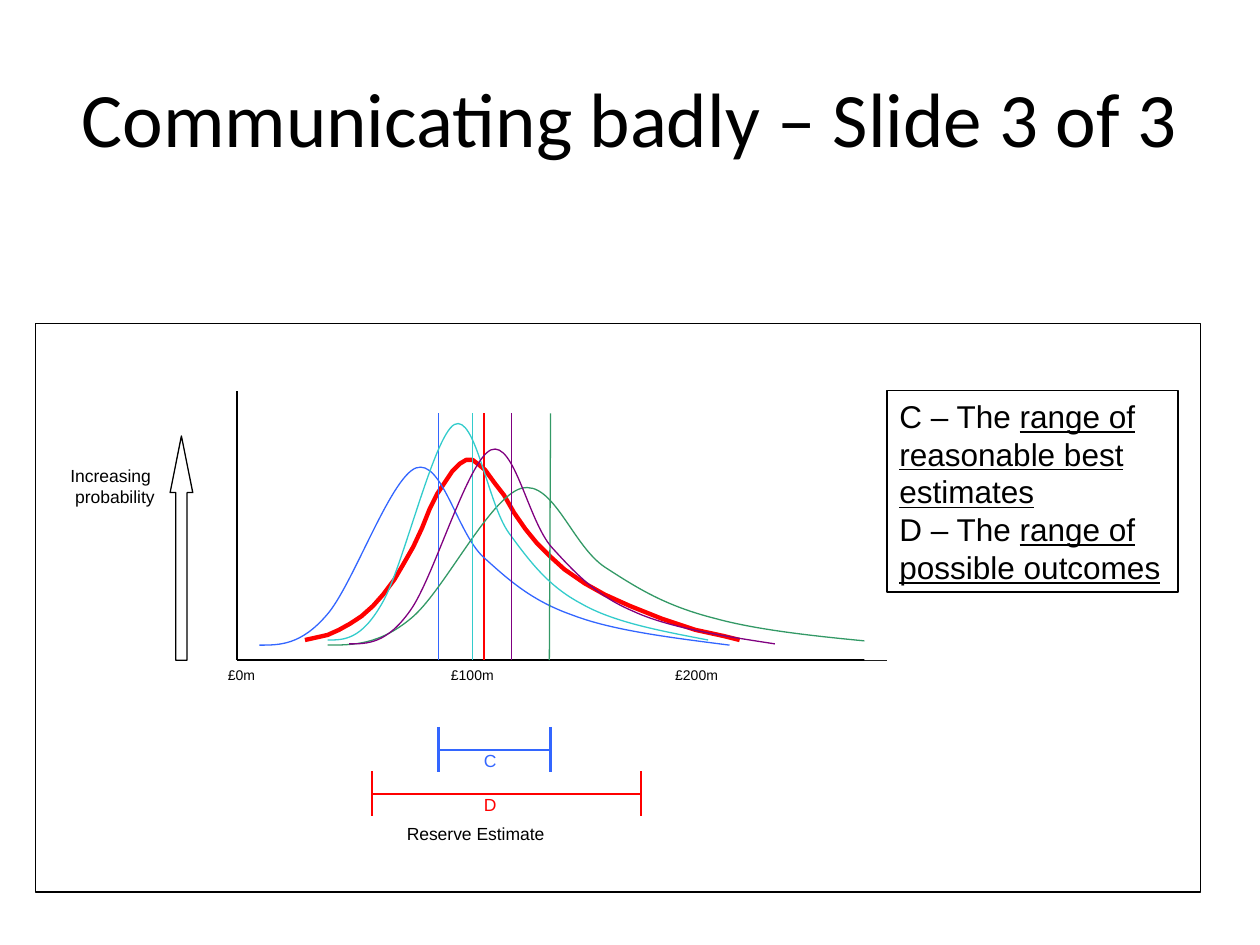
from dataclasses import dataclass

from lxml import etree
from pptx import Presentation
from pptx.dml.color import RGBColor
from pptx.enum import shapes, text
from pptx.oxml import ns
from pptx.util import Inches, Pt

COLORS = {
    "black": "000000", "white": "FFFFFF", "red": "FF0000", "blue": "3366FF",
    "green": "339966", "cyan": "33CCCC", "purple": "800080",
}

BELL = [
    (0, 1000), (43, 1000), (88, 1000), (143, 839), (198, 684), (278, 103),
    (333, 50), (388, 0), (420, 395), (476, 527), (532, 655), (580, 763),
    (667, 840), (752, 922), (876, 960), (1000, 1000),
]

MAIN_CURVE = [
    (2.42, 5.08), (2.51, 5.06), (2.6, 5.04), (2.69, 5), (2.78, 4.95),
    (2.87, 4.89), (2.96, 4.81), (3.04, 4.72), (3.13, 4.6), (3.2, 4.48),
    (3.28, 4.34), (3.35, 4.19), (3.41, 4.04), (3.47, 3.92), (3.53, 3.83),
    (3.59, 3.74), (3.65, 3.68), (3.7, 3.65), (3.75, 3.65), (3.79, 3.68),
    (3.85, 3.73), (3.93, 3.84), (4, 3.93), (4.08, 4.07), (4.17, 4.2),
    (4.26, 4.31), (4.37, 4.42), (4.48, 4.52), (4.64, 4.63), (4.8, 4.72),
    (5, 4.81), (5.25, 4.91), (5.52, 5), (5.75, 5.05), (5.87, 5.08),
]

AXIS_X, AXIS_Y, AXIS_END = 1.88, 5.24, 7.04


@dataclass
class Box:
    x: float
    y: float
    w: float
    h: float


@dataclass
class Label:
    box: Box
    lines: list[str]
    size: float


@dataclass
class Estimate:
    color: str
    box: Box
    mean_foot: float
    mean_top: float
    top: float = 3.28


@dataclass
class Bracket:
    name: str
    left: float
    right: float
    y: float
    color: str
    name_box: Box


LABELS = [
    Label(Box(1.71, 5.24, 0.89, 0.36), ["£0m"], 8),
    Label(Box(3.48, 5.24, 0.89, 0.36), ["£100m"], 8),
    Label(Box(5.26, 5.24, 0.89, 0.36), ["£200m"], 8),
    Label(Box(3.13, 6.48, 3.02, 0.36), ["Reserve Estimate"], 10),
    Label(Box(0.46, 3.64, 0.89, 1.24), ["Increasing", " probability"], 10),
]

ESTIMATES = [
    Estimate("blue", Box(2.06, 3.64, 3.73, 1.48), 3.48, 3.48),
    Estimate("green", Box(2.6, 3.81, 4.62, 1.31), 4.36, 4.37),
    Estimate("cyan", Box(2.6, 3.28, 3.02, 1.8), 3.75, 3.75),
    Estimate("purple", Box(2.77, 3.49, 3.38, 1.62), 4.06, 4.06),
]

BRACKETS = [
    Bracket("D", 2.95, 5.09, 6.3, "red", Box(3.84, 6.3, 0.14, 0.26)),
    Bracket("C", 3.48, 4.37, 5.95, "blue", Box(3.84, 5.95, 0.13, 0.26)),
]

LEGEND = [
    ("C – The ", "range of reasonable best estimates"),
    ("D – The ", "range of possible outcomes"),
]


def rgb(name: str) -> RGBColor:
    return RGBColor.from_string(COLORS[name])


def place(box: Box) -> list[int]:
    return [Inches(v) for v in (box.x, box.y, box.w, box.h)]


def add_block(s, kind, box: Box, fill: str | None = None, line: str | None = None):
    sp = s.shapes.add_shape(kind, *place(box))
    sp.shadow.inherit = False
    if fill:
        sp.fill.solid()
        sp.fill.fore_color.rgb = rgb(fill)
    else:
        sp.fill.background()
    if line:
        sp.line.color.rgb = rgb(line)
        sp.line.width = Pt(0.75)
    else:
        sp.line.fill.background()
    sp.text_frame.word_wrap = True
    sp.text_frame.vertical_anchor = text.MSO_ANCHOR.TOP
    return sp


def style(p, size: float, color: str = "black", font: str = "Arial",
          align=text.PP_ALIGN.LEFT) -> None:
    p.alignment = align
    p.font.size = Pt(size)
    p.font.name = font
    p.font.color.rgb = rgb(color)


def add_line(s, x1: float, y1: float, x2: float, y2: float,
             color: str, width: float) -> None:
    cn = s.shapes.add_connector(
        shapes.MSO_CONNECTOR.STRAIGHT,
        Inches(x1), Inches(y1), Inches(x2), Inches(y2))
    cn.line.color.rgb = rgb(color)
    cn.line.width = Pt(width)
    etree.SubElement(cn._element.spPr, ns.qn("a:effectLst"))


def add_open_path(s, points, color: str, width: float):
    pts = [(Inches(x), Inches(y)) for x, y in points]
    fb = s.shapes.build_freeform(*pts[0])
    fb.add_line_segments(pts[1:], close=False)
    sp = fb.convert_to_shape()
    sp.shadow.inherit = False
    sp.fill.background()
    sp.line.color.rgb = rgb(color)
    sp.line.width = Pt(width)
    return sp


def add_bell(s, box: Box, color: str) -> None:
    points = [(box.x + box.w * u / 1000, box.y + box.h * v / 1000) for u, v in BELL]
    sp = add_open_path(s, points, color, 0.75)
    outline = next(sp._element.iter(ns.qn("a:path")))
    segments = outline.findall(ns.qn("a:lnTo"))
    for i in range(0, len(segments), 3):
        curve = etree.SubElement(outline, ns.qn("a:cubicBezTo"))
        for segment in segments[i:i + 3]:
            curve.append(segment[0])
            outline.remove(segment)


def add_label(s, label: Label) -> None:
    tf = add_block(s, shapes.MSO_SHAPE.RECTANGLE, label.box, "white").text_frame
    for i, line in enumerate(label.lines):
        p = tf.add_paragraph() if i else tf.paragraphs[0]
        p.text = line
        style(p, label.size)


def add_legend(s) -> None:
    sp = add_block(s, shapes.MSO_SHAPE.RECTANGLE, Box(7.04, 3.1, 2.31, 1.6), "white", "black")
    tf = sp.text_frame
    for i, (lead, term) in enumerate(LEGEND):
        p = tf.add_paragraph() if i else tf.paragraphs[0]
        p.add_run().text = lead
        r = p.add_run()
        r.text = term
        r.font.underline = True
        style(p, 18)


def add_bracket(s, b: Bracket) -> None:
    add_line(s, b.left, b.y, b.right, b.y, b.color, 1.25)
    for x in (b.left, b.right):
        add_line(s, x, b.y - 0.18, x, b.y + 0.18, b.color, 1.25)
    tf = s.shapes.add_textbox(*place(b.name_box)).text_frame
    tf.margin_left = tf.margin_right = tf.margin_top = tf.margin_bottom = 0
    tf.text = b.name
    style(tf.paragraphs[0], 10, b.color)


def add_title(s) -> None:
    tf = s.shapes.add_textbox(*place(Box(0.5, 0.3, 9, 1.25))).text_frame
    tf.word_wrap = True
    tf.vertical_anchor = text.MSO_ANCHOR.MIDDLE
    tf.text = "Communicating badly – Slide 3 of 3"
    style(tf.paragraphs[0], 44, font="Calibri", align=text.PP_ALIGN.CENTER)


def main() -> None:
    prs = Presentation()
    prs.slide_width, prs.slide_height = Inches(10), Inches(7.5)
    s = prs.slides.add_slide(prs.slide_layouts[6])
    add_block(s, shapes.MSO_SHAPE.RECTANGLE, Box(0.28, 2.57, 9.25, 4.51), line="black")
    for label in LABELS:
        add_label(s, label)
    add_line(s, AXIS_X, AXIS_Y, AXIS_X, 3.1, "black", 1.25)
    add_line(s, AXIS_X, AXIS_Y, AXIS_END, AXIS_Y, "black", 1.25)
    arrow = add_block(s, shapes.MSO_SHAPE.UP_ARROW, Box(1.35, 3.46, 0.18, 1.78), "white", "black")
    arrow.adjustments[0], arrow.adjustments[1] = 0.5, 2.5
    add_legend(s)
    add_open_path(s, MAIN_CURVE, "red", 2.5)
    for bracket in BRACKETS:
        add_bracket(s, bracket)
    add_line(s, 3.84, AXIS_Y, 3.84, 3.28, "red", 1)
    for e in ESTIMATES:
        add_bell(s, e.box, e.color)
        add_line(s, e.mean_foot, AXIS_Y, e.mean_top, e.top, e.color, 0.75)
    add_block(s, shapes.MSO_SHAPE.RECTANGLE, Box(6.86, 4.88, 0.89, 0.36), "white")
    add_title(s)
    prs.save("out.pptx")


if __name__ == "__main__":
    main()
